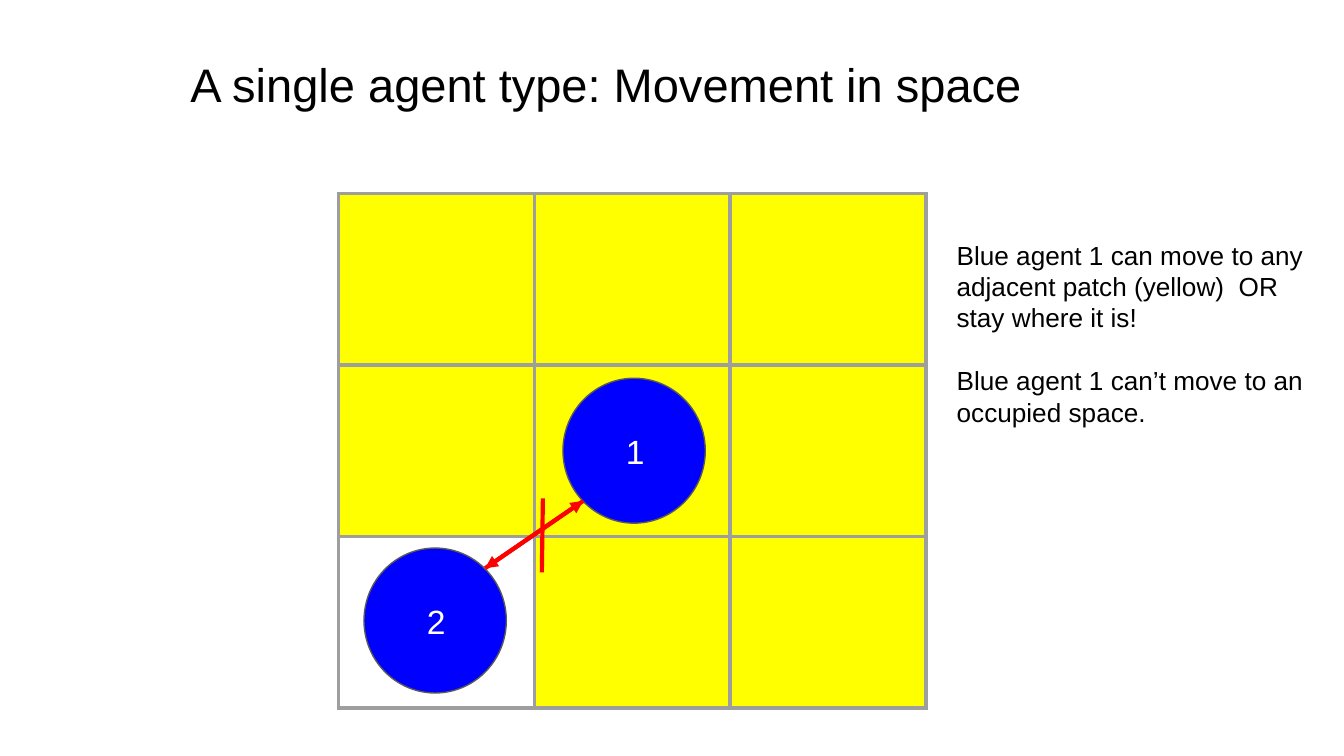
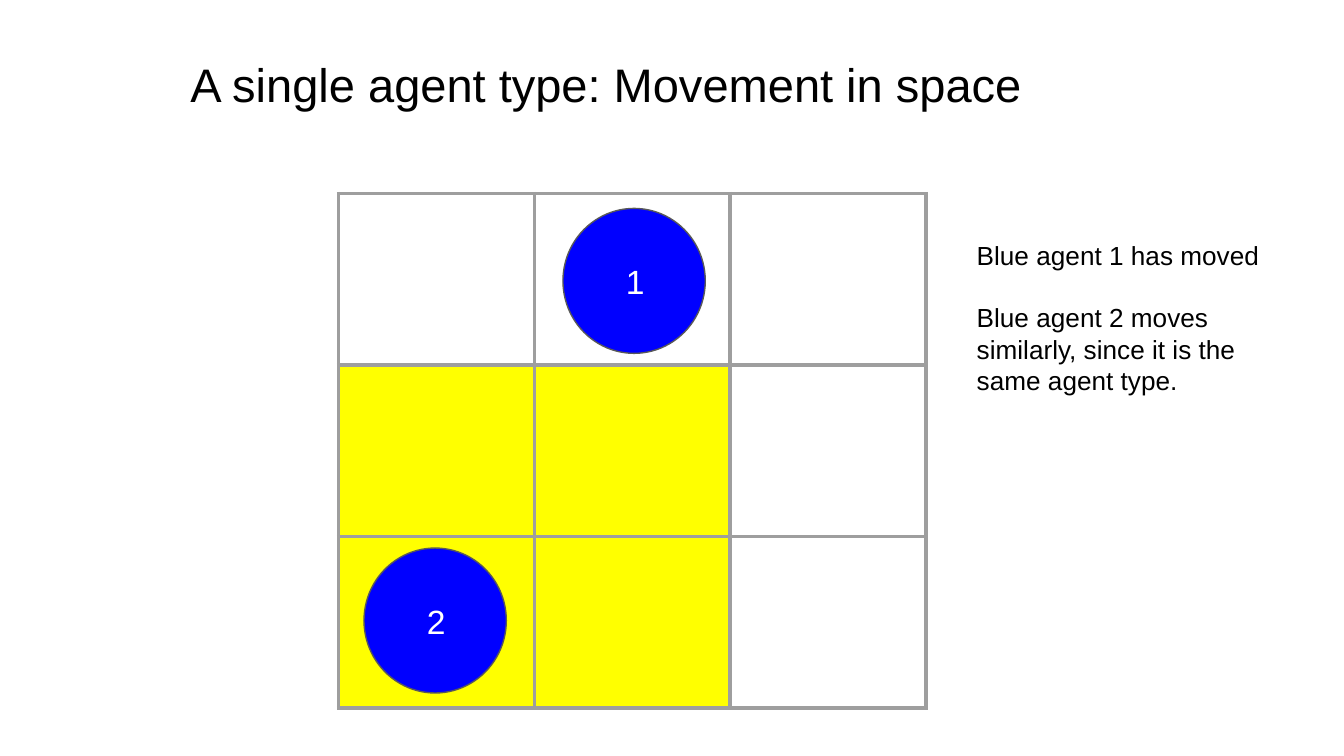
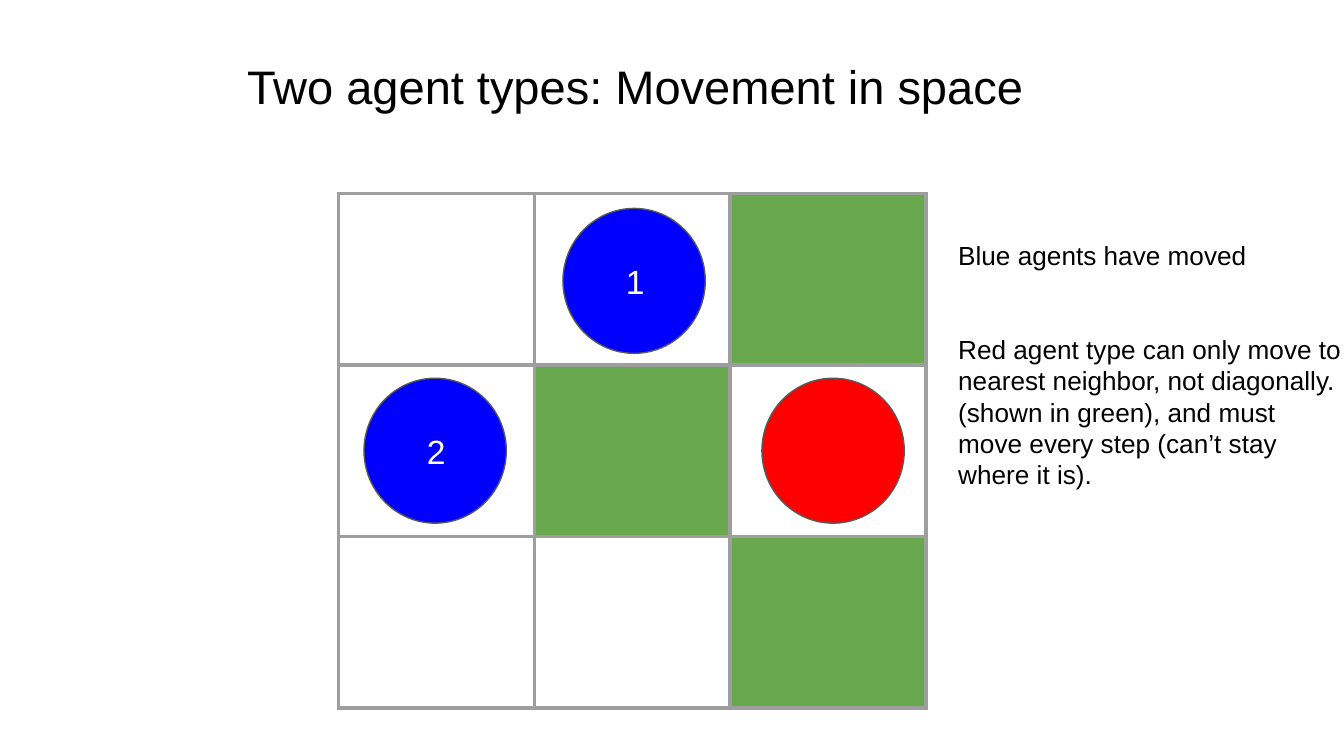
from lxml import etree
from pptx import Presentation
from pptx.dml.color import RGBColor
from pptx.enum.shapes import MSO_CONNECTOR, MSO_SHAPE
from pptx.oxml.ns import qn
from pptx.util import Cm, Pt

OVAL = MSO_SHAPE.OVAL
STRAIGHT = MSO_CONNECTOR.STRAIGHT

BLACK = RGBColor(0x00, 0x00, 0x00)
WHITE = RGBColor(0xFF, 0xFF, 0xFF)
YELLOW = RGBColor(0xFF, 0xFF, 0x00)
GREEN = RGBColor(0x6A, 0xA8, 0x4F)
BLUE = RGBColor(0x00, 0x00, 0xFF)
RED = RGBColor(0xFF, 0x00, 0x00)
GRID_GREY = RGBColor(0x9E, 0x9E, 0x9E)
OUTLINE_GREY = RGBColor(0x59, 0x59, 0x59)

PATCH_COLORS = {".": WHITE, "Y": YELLOW, "G": GREEN}
GRID_SIZE = 3
LINE_WEIGHT = Pt(2.25)
EMPTY_LINE = 16.8


class AgentDeck:
    font = "Arial"
    margins = {
        "margin_left": Cm(0.25),
        "margin_right": Cm(0.25),
        "margin_top": Cm(0.25),
        "margin_bottom": Cm(0.25),
        "word_wrap": True,
    }

    def __init__(self):
        self.presentation = Presentation()
        self.presentation.slide_width = Cm(25.4)
        self.presentation.slide_height = Cm(14.29)
        self.slide = None

    def add_slide(self, title, left=3.35, top=0.79):
        self.slide = self.presentation.slides.add_slide(self.presentation.slide_layouts[6])
        self.add_text([(title, 0)], left, top, 18.26, 1.6, size=25.2)

    def add_text(self, paragraphs, left, top, width, height, size=14, color=BLACK):
        box = self.slide.shapes.add_textbox(Cm(left), Cm(top), Cm(width), Cm(height))
        frame = box.text_frame
        for name, value in self.margins.items():
            setattr(frame, name, value)
        for index, (text, empty_lines) in enumerate(paragraphs):
            paragraph = frame.add_paragraph() if index else frame.paragraphs[0]
            paragraph.space_before = Pt(EMPTY_LINE * empty_lines)
            run = paragraph.add_run()
            run.text = text
            run.font.color.rgb = color
            for name, value in {"name": self.font, "size": Pt(size)}.items():
                setattr(run.font, name, value)

    def add_note(self, paragraphs, left, width, height=4.7):
        self.add_text(paragraphs, left, 4.27, width, height)

    def add_patches(self, patches):
        table = self.slide.shapes.add_table(
            GRID_SIZE, GRID_SIZE, Cm(6.4), Cm(3.66), Cm(11.1), Cm(9.72)
        ).table
        for column in table.columns:
            column.width = Cm(3.7)
        for row, codes in enumerate(patches):
            table.rows[row].height = Cm(3.24)
            for column, code in enumerate(codes):
                cell = table.cell(row, column)
                self.add_borders(cell)
                cell.fill.solid()
                cell.fill.fore_color.rgb = PATCH_COLORS[code]

    def add_borders(self, cell):
        properties = cell._tc.get_or_add_tcPr()
        for side in ("a:lnL", "a:lnR", "a:lnT", "a:lnB"):
            border = etree.SubElement(properties, qn(side), w=str(LINE_WEIGHT))
            fill = etree.SubElement(border, qn("a:solidFill"))
            etree.SubElement(fill, qn("a:srgbClr"), val=str(GRID_GREY))

    def add_agent(self, row, column, label=None, color=BLUE):
        left = 6.88 + 3.76 * column
        top = 3.94 + 3.21 * row
        agent = self.slide.shapes.add_shape(OVAL, Cm(left), Cm(top), Cm(2.69), Cm(2.74))
        agent.shadow.inherit = False
        agent.fill.solid()
        agent.fill.fore_color.rgb = color
        agent.line.color.rgb = OUTLINE_GREY
        agent.line.width = Pt(0.75)
        if label:
            self.add_text([(label, 0)], left + 0.94, top + 0.74, 0.81, 1.27, 18, WHITE)

    def add_line(self, start, end, arrow=False):
        points = [Cm(value) for value in (*start, *end)]
        connector = self.slide.shapes.add_connector(STRAIGHT, *points)
        connector.line.color.rgb = RED
        connector.line.width = LINE_WEIGHT
        if arrow:
            etree.SubElement(connector.line._get_or_add_ln(), qn("a:tailEnd"), type="triangle")
        etree.SubElement(connector._element.spPr, qn("a:effectLst"))

    def save(self):
        self.presentation.save("out.pptx")


def main():
    deck = AgentDeck()

    deck.add_slide("A single agent type: Movement in space")
    deck.add_patches(("YYY", "YYY", ".YY"))
    deck.add_agent(1, 1, "1")
    deck.add_agent(2, 0, "2")
    deck.add_note(
        [
            ("Blue agent 1 can move to any", 0),
            ("adjacent patch (yellow)  OR stay where it is!", 0),
            ("Blue agent 1 can’t move to an occupied space.", 1),
        ],
        17.83,
        7.57,
    )
    first_agent, second_agent = (11.02, 9.47), (9.17, 10.74)
    deck.add_line(first_agent, second_agent, arrow=True)
    deck.add_line((10.26, 9.42), (10.24, 10.82))
    deck.add_line(second_agent, first_agent, arrow=True)

    deck.add_slide("A single agent type: Movement in space")
    deck.add_patches(("...", "YY.", "YY."))
    deck.add_agent(0, 1, "1")
    deck.add_agent(2, 0, "2")
    deck.add_note(
        [
            ("Blue agent 1 has moved", 0),
            ("Blue agent 2 moves similarly, since it is the same agent type.", 1),
        ],
        18.21,
        6.68,
    )

    deck.add_slide("Two agent types: Movement in space", left=4.42, top=0.84)
    deck.add_patches(("..G", ".G.", "..G"))
    deck.add_agent(0, 1, "1")
    deck.add_agent(1, 0, "2")
    deck.add_note(
        [
            ("Blue agents have moved", 0),
            ("Red agent type can only move to nearest neighbor, not diagonally.", 2),
            ("(shown in green), and must move every step (can’t stay where it is).", 0),
        ],
        17.86,
        7.8,
        height=6.5,
    )
    deck.add_agent(1, 2, color=RED)

    deck.save()


if __name__ == "__main__":
    main()
